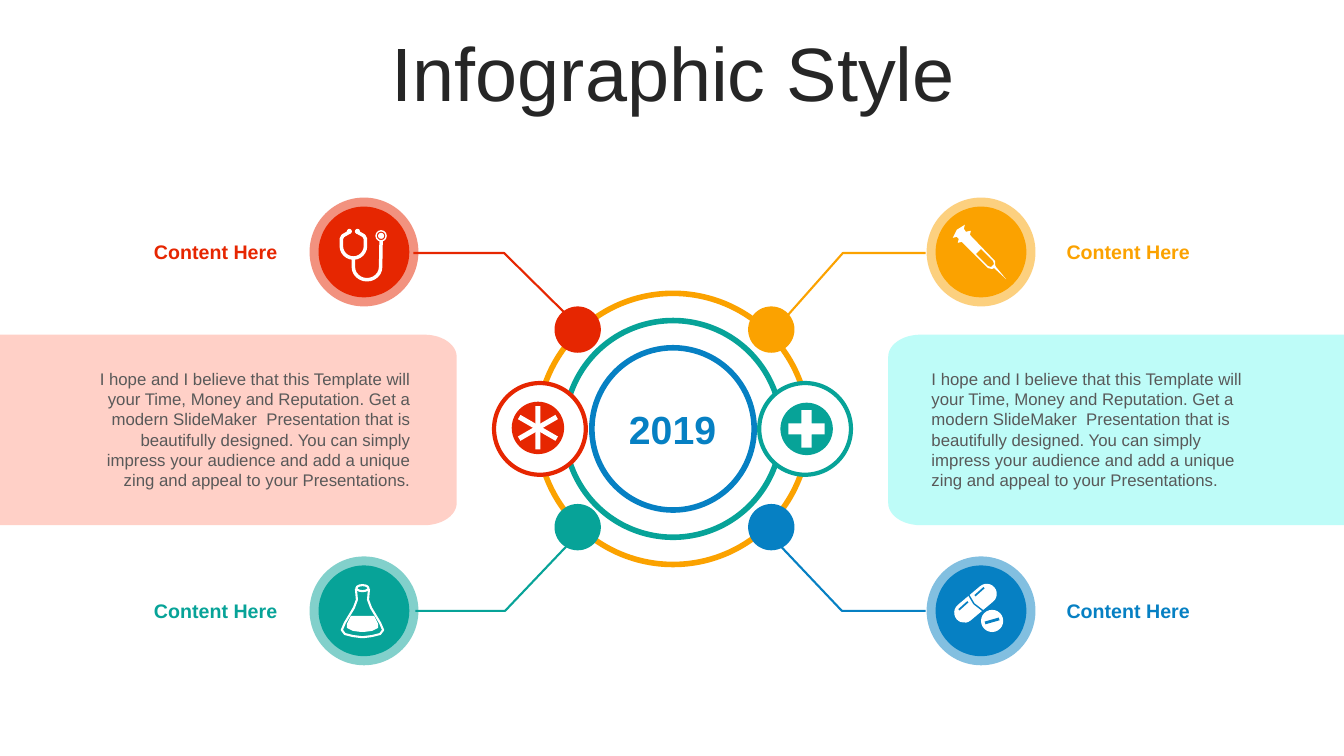
from dataclasses import dataclass
from math import cos, radians, sin

from lxml.etree import SubElement
from pptx import Presentation
from pptx.dml.color import RGBColor
from pptx.enum.shapes import MSO_SHAPE
from pptx.enum.text import MSO_ANCHOR, MSO_AUTO_SIZE, PP_ALIGN
from pptx.oxml.ns import qn
from pptx.shapes.autoshape import Shape
from pptx.slide import Slide
from pptx.text.text import TextFrame
from pptx.util import Inches, Pt

RED = RGBColor(0xE6, 0x26, 0x01)
ORANGE = RGBColor(0xFB, 0xA2, 0x00)
TEAL = RGBColor(0x07, 0xA3, 0x98)
BLUE = RGBColor(0x06, 0x80, 0xC3)
PINK = RGBColor(0xFF, 0xD0, 0xC7)
AQUA = RGBColor(0xBE, 0xFC, 0xF8)
WHITE = RGBColor(0xFF, 0xFF, 0xFF)
DARK = RGBColor(0x26, 0x26, 0x26)
GRAY = RGBColor(0x59, 0x59, 0x59)

SLIDE_WIDTH = 13.33
BODY_TEXT = (
    "I hope and I believe that this Template will your Time, Money and Reputation. "
    "Get a modern SlideMaker  Presentation that is beautifully designed. You can simply "
    "impress your audience and add a unique zing and appeal to your Presentations."
)

Point = tuple[float, float]
Box = tuple[float, float, float, float]


@dataclass(frozen=True)
class Branch:
    colour: RGBColor
    badge: Point
    node: Point
    route: list[Point]
    label_left: float
    align: PP_ALIGN


@dataclass(frozen=True)
class Panel:
    colour: RGBColor
    outline: list[Point]
    text_box: Box
    align: PP_ALIGN


def arc(center: Point, radius_x: float, radius_y: float, start: int, end: int) -> list[Point]:
    """Return points along an ellipse, with angles in degrees clockwise from the right."""
    angles = [radians(start + (end - start) * step / 12) for step in range(13)]
    return [(center[0] + radius_x * cos(a), center[1] + radius_y * sin(a)) for a in angles]


def mirrored(half: list[Point], axis: float) -> list[Point]:
    """Extend a half outline with its reflection about a vertical axis."""
    return half + [(2 * axis - x, y) for x, y in reversed(half)]


def paint(shape: Shape, fill: RGBColor | None, line: RGBColor | None, width: float) -> Shape:
    shape.shadow.inherit = False
    if fill is None:
        shape.fill.background()
    else:
        shape.fill.solid()
        shape.fill.fore_color.rgb = fill
    if line is None:
        shape.line.fill.background()
    else:
        shape.line.color.rgb = line
        shape.line.width = Pt(width)
    return shape


def add_preset(slide: Slide, kind: MSO_SHAPE, box: Box, fill: RGBColor) -> Shape:
    shape = slide.shapes.add_shape(kind, *map(Inches, box))
    return paint(shape, fill, None, 0)


def add_circle(slide: Slide, center: Point, radius: float, fill: RGBColor | None = None,
               line: RGBColor | None = None, width: float = 0) -> Shape:
    box = (center[0] - radius, center[1] - radius, 2 * radius, 2 * radius)
    shape = slide.shapes.add_shape(MSO_SHAPE.OVAL, *map(Inches, box))
    return paint(shape, fill, line, width)


def add_outline(slide: Slide, *contours: list[Point], fill: RGBColor | None = None,
                line: RGBColor | None = None, width: float = 1.5) -> Shape:
    """Draw contours as one freeform, closed when it is filled."""
    paths = [[(Inches(x), Inches(y)) for x, y in contour] for contour in contours]
    builder = slide.shapes.build_freeform(*paths[0][0])
    for index, points in enumerate(paths):
        if index:
            builder.move_to(*points[0])
        builder.add_line_segments(points[1:], close=fill is not None)
    return paint(builder.convert_to_shape(), fill, line, width)


def write(frame: TextFrame, text: str, *, size: float, colour: RGBColor, bold: bool = False,
          align: PP_ALIGN = PP_ALIGN.LEFT, anchor: MSO_ANCHOR = MSO_ANCHOR.MIDDLE) -> None:
    frame.word_wrap = True
    frame.auto_size = MSO_AUTO_SIZE.NONE
    frame.vertical_anchor = anchor
    paragraph = frame.paragraphs[0]
    paragraph.alignment = align
    run = paragraph.add_run()
    run.text = text
    run.font.name = "Arial"
    run.font.size = Pt(size)
    run.font.bold = bold
    run.font.color.rgb = colour


def add_text(slide: Slide, box: Box, text: str, **text_format) -> None:
    write(slide.shapes.add_textbox(*map(Inches, box)).text_frame, text, **text_format)


def add_badge(slide: Slide, branch: Branch) -> None:
    halo = add_circle(slide, branch.badge, 0.54, branch.colour)
    colour = halo.fill._xPr.find(qn("a:solidFill"))[0]
    SubElement(colour, qn("a:alpha"), val="50000")
    add_circle(slide, branch.badge, 0.45, branch.colour)


def add_stethoscope(slide: Slide) -> None:
    headset = [(3.47, 2.3), (3.4, 2.34), (3.385, 2.37), *arc((3.505, 2.44), 0.12, 0.12, 180, 0),
               (3.625, 2.37), (3.61, 2.34), (3.54, 2.3)]
    tube = [(3.505, 2.57), *arc((3.64, 2.65), 0.135, 0.125, 180, 0), (3.78, 2.39)]
    add_outline(slide, headset, tube, line=WHITE, width=2.5)
    for ear_x in (3.465, 3.545):
        add_circle(slide, (ear_x, 2.295), 0.025, WHITE)
    add_circle(slide, (3.78, 2.34), 0.05, line=WHITE, width=1)
    add_circle(slide, (3.78, 2.34), 0.03, WHITE)


def add_syringe(slide: Slide) -> None:
    body = [(9.57, 2.23), (9.56, 2.27), (9.58, 2.3), (9.63, 2.29), (9.62, 2.33), (9.87, 2.59),
            (9.87, 2.63), (9.88, 2.65), (9.98, 2.77), (9.86, 2.66), (9.84, 2.67), (9.8, 2.66),
            (9.54, 2.4), (9.5, 2.41), (9.51, 2.37), (9.49, 2.35), (9.45, 2.36), (9.49, 2.28)]
    window = [(9.73, 2.47), (9.68, 2.52), (9.8, 2.64), (9.83, 2.65), (9.86, 2.62), (9.85, 2.59)]
    add_outline(slide, body, window, fill=WHITE)


def add_flask(slide: Slide) -> None:
    glass = [(3.53, 5.84), (3.54, 5.95), (3.51, 6.03), (3.42, 6.18), (3.39, 6.25),
             (3.42, 6.29), (3.5, 6.31), (3.58, 6.32)]
    liquid = [(3.48, 6.11), (3.44, 6.19), (3.44, 6.23), (3.5, 6.26), (3.58, 6.27)]
    add_outline(slide, mirrored(glass, 3.595), line=WHITE)
    add_outline(slide, mirrored(liquid, 3.595), fill=WHITE)
    add_outline(slide, arc((3.595, 5.835), 0.06, 0.03, 0, 360), line=WHITE)


def add_pills(slide: Slide) -> None:
    capsule = add_preset(slide, MSO_SHAPE.ROUNDED_RECTANGLE, (9.43, 5.885, 0.49, 0.2), WHITE)
    capsule.adjustments[0] = 0.5
    capsule.rotation = -40
    add_outline(slide, [(9.6, 5.89), (9.66, 5.99), (9.75, 6.06)], line=BLUE, width=1)
    add_circle(slide, (9.84, 6.16), 0.11, WHITE)
    slots = [[(9.51, 6.05), (9.6, 5.97)], [(9.67, 5.91), (9.76, 5.83)]]
    add_outline(slide, *slots, line=BLUE, width=1.25)
    add_outline(slide, [(9.77, 6.18), (9.91, 6.14)], line=BLUE, width=2)


def add_hub(slide: Slide) -> None:
    for radius, colour in ((1.345, ORANGE), (1.075, TEAL), (0.805, BLUE)):
        add_circle(slide, (6.675, 4.255), radius, line=colour, width=4)


def add_side_medallions(slide: Slide) -> None:
    for center_x, colour in ((5.355, RED), (7.985, TEAL)):
        add_circle(slide, (center_x, 4.255), 0.455, WHITE, colour, 3)
    add_circle(slide, (8, 4.255), 0.26, TEAL)
    cross = add_preset(slide, MSO_SHAPE.CROSS, (7.82, 4.07, 0.36, 0.37), WHITE)
    cross.adjustments[0] = 0.36
    add_circle(slide, (5.335, 4.245), 0.26, RED)
    for angle in (0, 60, 120):
        bar = add_preset(slide, MSO_SHAPE.RECTANGLE, (5.31, 4.03, 0.05, 0.43), WHITE)
        bar.rotation = angle


def main() -> None:
    presentation = Presentation()
    presentation.slide_width = Inches(SLIDE_WIDTH)
    presentation.slide_height = Inches(7.5)
    slide = presentation.slides.add_slide(presentation.slide_layouts[5])

    title = slide.shapes.title
    title.left, title.top, title.width, title.height = map(Inches, (0.35, 0.37, 12.66, 0.79))
    write(title.text_frame, "Infographic Style", size=54, colour=DARK, align=PP_ALIGN.CENTER)
    title.text_frame.paragraphs[0].line_spacing = 0.9
    title.text_frame.paragraphs[0].space_before = Pt(10)

    branches = [
        Branch(RED, (3.61, 2.5), (5.73, 3.27), [(5.76, 3.26), (5, 2.51), (4.1, 2.51)],
               1.37, PP_ALIGN.RIGHT),
        Branch(ORANGE, (9.73, 2.5), (7.65, 3.27), [(7.66, 3.3), (8.36, 2.51), (9.18, 2.51)],
               10.48, PP_ALIGN.LEFT),
        Branch(TEAL, (3.61, 6.06), (5.73, 5.23), [(5.76, 5.27), (5.01, 6.06), (4.12, 6.06)],
               1.37, PP_ALIGN.RIGHT),
        Branch(BLUE, (9.73, 6.06), (7.65, 5.23), [(7.64, 5.31), (8.35, 6.06), (9.18, 6.06)],
               10.48, PP_ALIGN.LEFT),
    ]
    for branch in branches:
        add_outline(slide, branch.route, line=branch.colour)
    add_hub(slide)
    for branch in branches:
        add_circle(slide, branch.node, 0.23, branch.colour)
        add_badge(slide, branch)
        add_text(slide, (branch.label_left, branch.badge[1] - 0.17, 1.48, 0.34), "Content Here",
                 size=14, colour=branch.colour, bold=True, align=branch.align)
    add_side_medallions(slide)

    left_outline = [(0, 3.32), *arc((4.21, 3.54), 0.32, 0.22, -90, 0),
                    *arc((4.21, 4.99), 0.32, 0.22, 0, 90), (0, 5.21)]
    right_outline = [(SLIDE_WIDTH - x + 0.01, y) for x, y in left_outline]
    panels = [
        Panel(PINK, left_outline, (0.77, 3.61, 3.4, 1.31), PP_ALIGN.RIGHT),
        Panel(AQUA, right_outline, (9.14, 3.61, 3.49, 1.31), PP_ALIGN.LEFT),
    ]
    for panel in panels:
        add_outline(slide, panel.outline, fill=panel.colour)
        add_text(slide, panel.text_box, BODY_TEXT, size=12, colour=GRAY,
                 align=panel.align, anchor=MSO_ANCHOR.TOP)
    add_text(slide, (5.93, 3.97, 1.48, 0.57), "2019", size=28, colour=BLUE, bold=True,
             align=PP_ALIGN.CENTER)

    for add_icon in (add_stethoscope, add_syringe, add_flask, add_pills):
        add_icon(slide)
    presentation.save("out.pptx")


if __name__ == "__main__":
    main()
